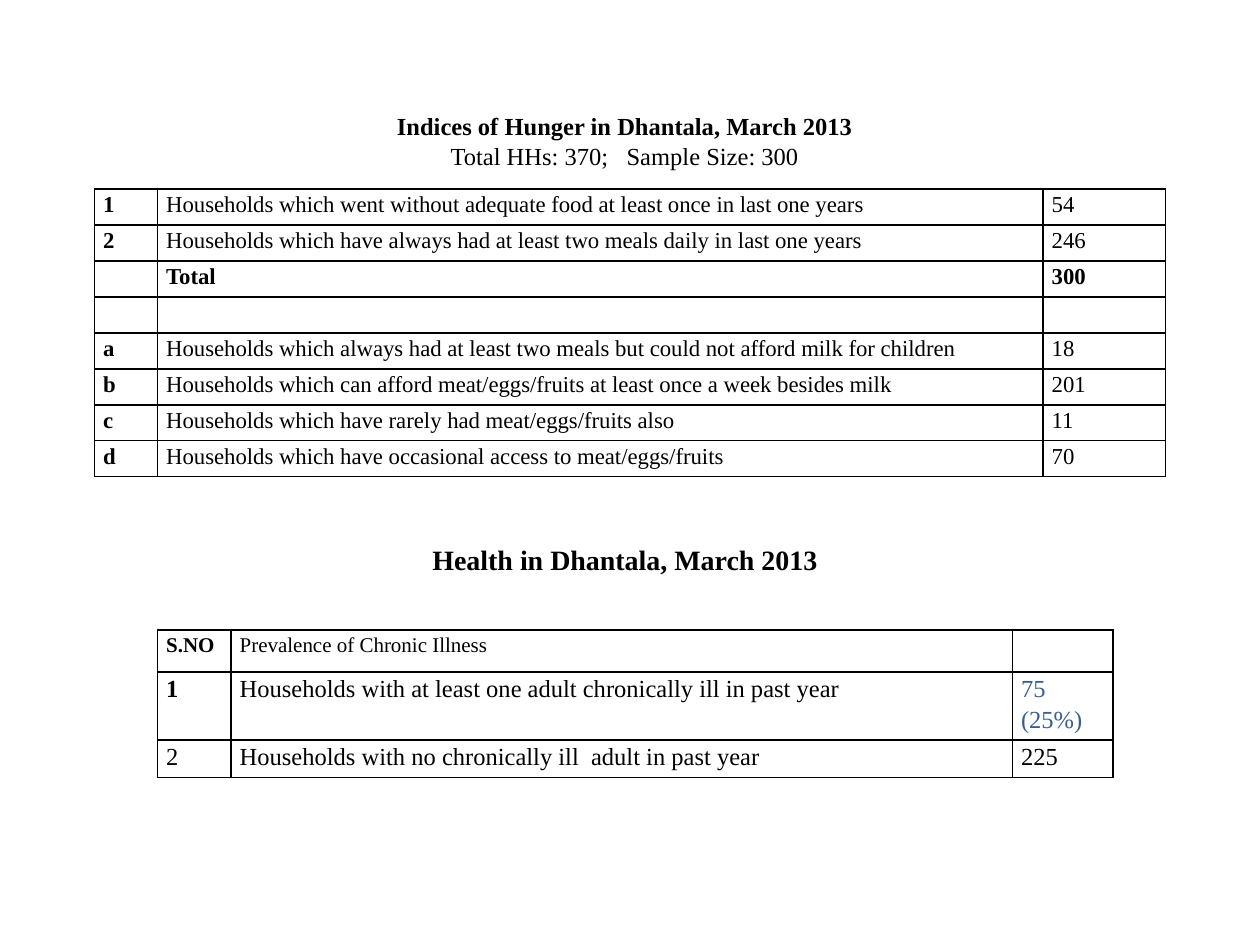
from lxml import etree
from pptx import Presentation
from pptx.dml.color import RGBColor
from pptx.enum.text import MSO_ANCHOR, PP_ALIGN
from pptx.oxml.ns import qn
from pptx.util import Pt

CENTER, LEFT = PP_ALIGN.CENTER, PP_ALIGN.LEFT
MIDDLE, TOP = MSO_ANCHOR.MIDDLE, MSO_ANCHOR.TOP
FONT = "Times New Roman"
COLORS = {"text": "000000", "border": "000000", "accent": "365F91"}
CELL_FORMAT = {"margin_left": Pt(5), "margin_right": Pt(5), "margin_top": 0,
               "margin_bottom": 0, "vertical_anchor": TOP}

# A cell is (text, bold) or (text, bold, color)
HUNGER_ROWS = [
    [("1", True), ("Households which went without adequate food at least once in last one years", False),
     ("54", False)],
    [("2", True), ("Households which have always had at least two meals daily in last one years", False),
     ("246", False)],
    [("", True), ("Total", True), ("300", True)],
    [("", False), ("", False), ("", False)],
    [("a", True), ("Households which always had at least two meals but could not afford milk for children", False),
     ("18", False)],
    [("b", True), ("Households which can afford meat/eggs/fruits at least once a week besides milk", False),
     ("201", False)],
    [("c", True), ("Households which have rarely had meat/eggs/fruits also", False), ("11", False)],
    [("d", True), ("Households which have occasional access to meat/eggs/fruits", False), ("70", False)],
]
HEALTH_ROWS = [
    [("S.NO", True), ("Prevalence of Chronic Illness", False), ("", False)],
    [("1", True), ("Households with at least one adult chronically ill in past year", False),
     ("75  (25%)", False, "accent")],
    [("2", False), ("Households with no chronically ill  adult in past year", False), ("225", False)],
]


def add_span(para, text, size, bold, color="text"):
    span = para.add_run()
    span.text = text
    for name, value in {"name": FONT, "size": Pt(size), "bold": bold}.items():
        setattr(span.font, name, value)
    span.font.color.rgb = RGBColor.from_string(COLORS[color])


def add_heading(page, left, top, width, height, lines, size, align):
    """Add a text box with one paragraph for each (text, bold) line."""
    box = page.shapes.add_textbox(Pt(left), Pt(top), Pt(width), Pt(height))
    frame = box.text_frame
    frame.word_wrap = True
    frame.vertical_anchor = MIDDLE
    for index, (text, bold) in enumerate(lines):
        para = frame.add_paragraph() if index else frame.paragraphs[0]
        para.alignment = align
        add_span(para, text, size, bold)


def add_borders(cell):
    properties = cell._tc.get_or_add_tcPr()
    for index, side in enumerate(("lnL", "lnR", "lnT", "lnB")):
        line = etree.Element(qn(f"a:{side}"), w=str(Pt(1)))
        fill = etree.SubElement(line, qn("a:solidFill"))
        etree.SubElement(fill, qn("a:srgbClr"), val=COLORS["border"])
        properties.insert(index, line)


def fill_cell(cell, size, text, bold, color="text"):
    for name, value in CELL_FORMAT.items():
        setattr(cell, name, value)
    cell.fill.background()
    add_borders(cell)
    para = cell.text_frame.paragraphs[0]
    para.line_spacing = 1.15
    if text:
        add_span(para, text, size, bold, color)
    else:  # keeps an empty cell from stretching its row
        etree.SubElement(para._p, qn("a:endParaRPr"), sz=str(size * 100))


def add_grid(page, left, top, widths, heights, rows, sizes):
    """Add a bordered table; sizes holds one font size per row."""
    frame = page.shapes.add_table(len(rows), len(widths), Pt(left), Pt(top),
                                  Pt(sum(widths)), Pt(sum(heights)))
    table = frame.table
    table.first_row = table.horz_banding = False
    for column, width in zip(table.columns, widths):
        column.width = Pt(width)
    for row, height, values, size in zip(table.rows, heights, rows, sizes):
        row.height = Pt(height)
        for cell, value in zip(row.cells, values):
            fill_cell(cell, size, *value)


def main():
    deck = Presentation()
    deck.slide_width, deck.slide_height = Pt(720), Pt(540)
    page = deck.slides.add_slide(deck.slide_layouts[6])

    add_heading(page, 168, 60, 378, 41,
                [("Indices of Hunger in Dhantala, March 2013", True),
                 ("Total HHs: 370;   Sample Size: 300", False)], 14, CENTER)
    row_count = len(HUNGER_ROWS)
    add_grid(page, 54, 108, [36, 506, 70], [20.57] * row_count, HUNGER_ROWS, [13] * row_count)

    add_heading(page, 240, 306, 240, 27, [("Health in Dhantala, March 2013", True)], 16, LEFT)
    add_grid(page, 90, 360, [42, 446.5, 57.5], [24, 38.8, 21.6], HEALTH_ROWS, [12, 14, 14])

    deck.save("out.pptx")


if __name__ == "__main__":
    main()
